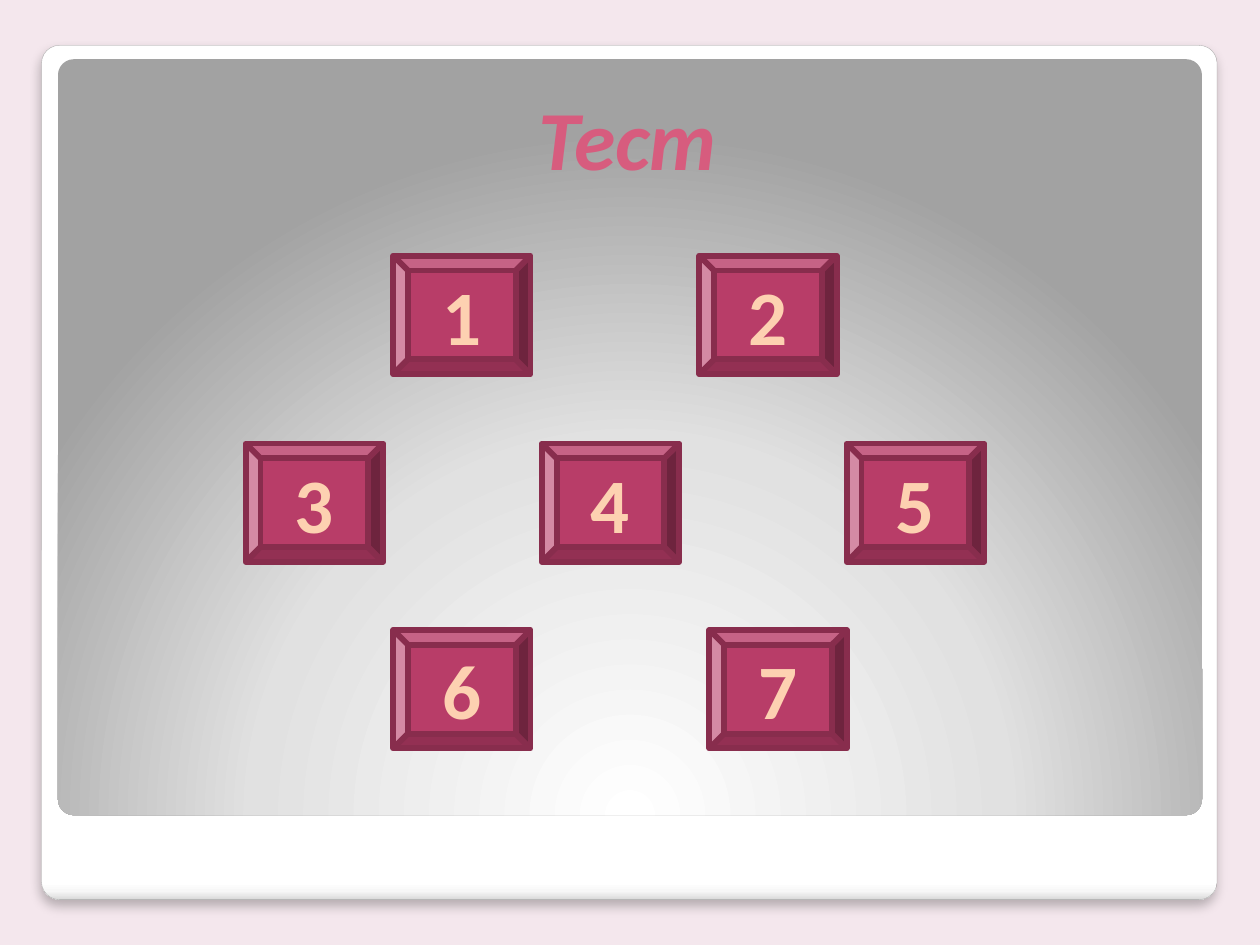
"""Build a quiz menu slide with a title and seven numbered bevel buttons."""
from dataclasses import dataclass

from pptx import Presentation
from pptx.dml.color import RGBColor
from pptx.enum.shapes import MSO_SHAPE as Shape
from pptx.enum.text import MSO_ANCHOR as Anchor, PP_ALIGN as Align
from pptx.oxml import parse_xml
from pptx.oxml.ns import nsdecls, qn
from pptx.util import Inches, Pt

BACKGROUND = RGBColor(0xF4, 0xE7, 0xED)
FRAME_LINE = RGBColor(0xA4, 0xA4, 0xA4)
TITLE_PINK = RGBColor(0xD7, 0x5C, 0x7E)
BUTTON_FILL = RGBColor(0xB8, 0x3D, 0x68)
BUTTON_LINE = RGBColor(0x88, 0x2D, 0x4D)
NUMBER_PEACH = RGBColor(0xFD, 0xD1, 0xB1)
WHITE = RGBColor(0xFF, 0xFF, 0xFF)
OFF_WHITE = RGBColor(0xF7, 0xF7, 0xF7)
FRAME_EDGE = RGBColor(0xDA, 0xDA, 0xDA)
PANEL_MID = RGBColor(0xE1, 0xE1, 0xE1)
PANEL_DARK = RGBColor(0xA2, 0xA2, 0xA2)

FONT = "Calibri"
BUTTON_W, BUTTON_H = 1.09, 0.94
LINEAR_DOWN = '<a:lin ang="5400000" scaled="0"/>'
RADIAL_BELOW = ('<a:path path="circle"><a:fillToRect l="50000" t="175000" '
                'r="50000" b="-75000"/></a:path>')
FRAME_SHADOW = (f'<a:outerShdw {nsdecls("a")} blurRad="{Pt(6)}" dist="{Pt(4)}" '
                'dir="5400000" algn="t" rotWithShape="0"><a:srgbClr val="000000">'
                '<a:alpha val="25000"/></a:srgbClr></a:outerShdw>')


@dataclass(frozen=True)
class Panel:
    left: float
    top: float
    width: float
    height: float
    stops: tuple
    direction: str


@dataclass(frozen=True)
class ButtonRow:
    top: float
    lefts: tuple


FRAME = Panel(0.33, 0.36, 9.33, 6.78,
              ((0, WHITE), (98, WHITE), (99, OFF_WHITE), (100, FRAME_EDGE)), LINEAR_DOWN)
BOARD = Panel(0.46, 0.47, 9.08, 6,
              ((0, WHITE), (55, PANEL_MID), (100, PANEL_DARK)), RADIAL_BELOW)
ROWS = (
    ButtonRow(2.03, (3.12, 5.55)),
    ButtonRow(3.52, (1.95, 4.3, 6.72)),
    ButtonRow(5, (3.12, 5.63)),
)


def add_panel(s, panel: Panel):
    """Add a rounded panel with a gradient fill and no line."""
    sp = s.shapes.add_shape(Shape.ROUNDED_RECTANGLE, Inches(panel.left), Inches(panel.top),
                            Inches(panel.width), Inches(panel.height))
    sp.adjustments[0] = 0.021
    sp.shadow.inherit = False
    sp.line.fill.background()
    sp.fill.background()
    stops = "".join(f'<a:gs pos="{pos * 1000}"><a:srgbClr val="{color}"/></a:gs>'
                    for pos, color in panel.stops)
    gradient = parse_xml(f'<a:gradFill {nsdecls("a")} rotWithShape="1">'
                         f'<a:gsLst>{stops}</a:gsLst>{panel.direction}</a:gradFill>')
    sp_pr = sp.element.spPr
    sp_pr.replace(sp_pr.find(qn("a:noFill")), gradient)
    return sp


def write_text(sp, text: str, size: int, color: RGBColor, anchor: Anchor,
               italic: bool = False) -> None:
    """Write one centred bold run into a shape."""
    tf = sp.text_frame
    tf.word_wrap = True
    tf.vertical_anchor = anchor
    p = tf.paragraphs[0]
    p.alignment = Align.CENTER
    r = p.add_run()
    r.text = text
    r.font.name = FONT
    r.font.size = Pt(size)
    r.font.bold = True
    r.font.italic = italic
    r.font.color.rgb = color


def add_button(s, left: float, top: float, number: int) -> None:
    """Add a numbered bevel button."""
    sp = s.shapes.add_shape(Shape.BEVEL, Inches(left), Inches(top),
                            Inches(BUTTON_W), Inches(BUTTON_H))
    sp.shadow.inherit = False
    sp.fill.solid()
    sp.fill.fore_color.rgb = BUTTON_FILL
    sp.line.color.rgb = BUTTON_LINE
    sp.line.width = Pt(3.35)
    write_text(sp, str(number), 44, NUMBER_PEACH, Anchor.MIDDLE)


def main() -> None:
    """Build and save the slide."""
    prs = Presentation()
    prs.slide_width, prs.slide_height = Inches(10), Inches(7.5)
    s = prs.slides.add_slide(prs.slide_layouts[5])
    s.background.fill.solid()
    s.background.fill.fore_color.rgb = BACKGROUND

    frame = add_panel(s, FRAME)
    frame.line.color.rgb = FRAME_LINE
    frame.line.width = Pt(0.16)
    frame.element.spPr.find(qn("a:effectLst")).append(parse_xml(FRAME_SHADOW))
    board = add_panel(s, BOARD)

    title = s.shapes.title
    for panel in (frame, board):
        title.element.addprevious(panel.element)
    title.left, title.top = Inches(0.47), Inches(0.39)
    title.width, title.height = Inches(9.03), Inches(1.15)
    write_text(title, "Тест", 48, TITLE_PINK, Anchor.BOTTOM, italic=True)

    spots = [(left, row.top) for row in ROWS for left in row.lefts]
    for number, (left, top) in enumerate(spots, start=1):
        add_button(s, left, top, number)

    prs.save("out.pptx")


if __name__ == "__main__":
    main()
